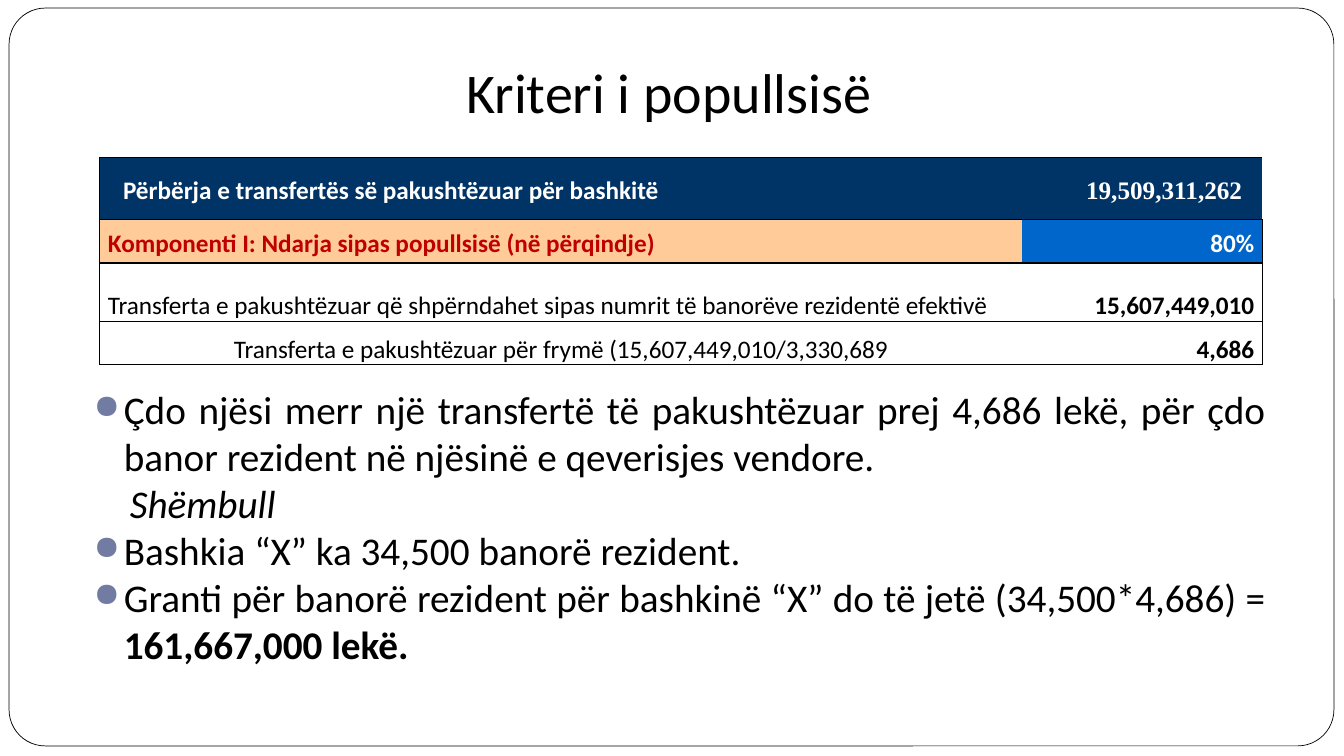
from lxml import etree
from pptx import Presentation
from pptx import util as u
from pptx.dml.color import RGBColor
from pptx.enum import shapes, text
from pptx.oxml.ns import qn

BLACK = RGBColor(0x00, 0x00, 0x00)
WHITE = RGBColor(0xFF, 0xFF, 0xFF)
NAVY = RGBColor(0x00, 0x33, 0x66)
BLUE = RGBColor(0x00, 0x66, 0xCC)
PEACH = RGBColor(0xFF, 0xCC, 0x99)
RED = RGBColor(0xC0, 0x00, 0x00)
BULLET = RGBColor(0x72, 0x7C, 0xA3)

LEFT, CENTER = text.PP_ALIGN.LEFT, text.PP_ALIGN.CENTER
RIGHT, JUSTIFY = text.PP_ALIGN.RIGHT, text.PP_ALIGN.JUSTIFY
MIDDLE, BOTTOM = text.MSO_ANCHOR.MIDDLE, text.MSO_ANCHOR.BOTTOM

TITLE = "Kriteri i popullsisë"
COLUMNS = (9.15, 2.38)
ROWS = [
    (0.62, MIDDLE, "TL B", "T B",
     ("Përbërja e transfertës së pakushtëzuar për bashkitë", LEFT, "Calibri", WHITE, True, NAVY, 0.15, 0),
     ("19,509,311,262", RIGHT, "Times New Roman", WHITE, True, NAVY, 0, 0.12)),
    (0.43, MIDDLE, "TLB", "TRB",
     ("Komponenti I: Ndarja sipas popullsisë (në përqindje)", LEFT, "Calibri", RED, True, PEACH, 0, 0),
     ("80%", RIGHT, "Calibri", WHITE, True, BLUE, 0, 0)),
    (0.58, BOTTOM, "TLB", "TRB",
     ("Transferta e pakushtëzuar që shpërndahet sipas numrit të banorëve rezidentë efektivë",
      LEFT, "Calibri", BLACK, False, None, 0, 0),
     ("15,607,449,010", RIGHT, "Calibri", BLACK, True, None, 0, 0)),
    (0.43, BOTTOM, "TLB", "TRB",
     ("Transferta e pakushtëzuar për frymë (15,607,449,010/3,330,689",
      CENTER, "Calibri", BLACK, False, None, 0, 0),
     ("4,686", RIGHT, "Calibri", BLACK, True, None, 0, 0)),
]
POINTS = [
    (True, False, "Çdo njësi merr një transfertë të pakushtëzuar prej 4,686 lekë, "
     "për çdo banor rezident në njësinë e qeverisjes vendore.", ""),
    (False, True, "Shëmbull", ""),
    (True, False, "Bashkia “X” ka 34,500 banorë rezident.", ""),
    (True, False, "Granti për banorë rezident për bashkinë “X” do të jetë (34,500*4,686) = ",
     "161,667,000 lekë."),
]


def box(*inches):
    return [u.Inches(length) for length in inches]


def style(paragraph, size, color, name="Calibri", align=LEFT):
    paragraph.alignment = align
    paragraph.font.size = u.Pt(size)
    paragraph.font.name = name
    paragraph.font.color.rgb = color


def set_borders(cell, sides):
    properties = cell._tc.get_or_add_tcPr()
    for position, side in enumerate("LRTB"):
        line = etree.Element(qn("a:ln" + side), w=str(u.Pt(1)))
        if side in sides:
            fill = etree.SubElement(line, qn("a:solidFill"))
            etree.SubElement(fill, qn("a:srgbClr"), val=str(BLACK))
        else:
            etree.SubElement(line, qn("a:noFill"))
        properties.insert(position, line)


def set_indent(paragraph, bulleted):
    properties = paragraph._p.get_or_add_pPr()
    properties.set("marL", str(u.Inches(0.3 if bulleted else 0.36)))
    properties.set("indent", str(u.Inches(-0.3 if bulleted else 0)))
    if bulleted:
        color = etree.Element(qn("a:buClr"))
        etree.SubElement(color, qn("a:srgbClr"), val=str(BULLET))
        size = etree.Element(qn("a:buSzPct"), val="85000")
        mark = etree.Element(qn("a:buChar"), char="●")
        for position, part in enumerate((color, size, mark)):
            properties.insert(position, part)


def add_frame(slide):
    frame = slide.shapes.add_shape(shapes.MSO_SHAPE.ROUNDED_RECTANGLE, *box(0.09, 0.08, 13.14, 7.32))
    frame.adjustments[0] = 0.049
    frame.shadow.inherit = False
    frame.fill.solid()
    frame.fill.fore_color.rgb = WHITE
    frame.line.color.rgb = BLACK
    frame.line.width = u.Pt(0.5)


def add_title(slide):
    title = slide.shapes.add_textbox(*box(2.02, 0.38, 9.23, 0.96)).text_frame
    title.word_wrap = True
    title.vertical_anchor = BOTTOM
    title.margin_bottom = u.Inches(0.1)
    heading = title.paragraphs[0]
    heading.text = TITLE
    heading.line_spacing = 1.15
    style(heading, 40, BLACK, align=CENTER)


def add_transfers(slide):
    height = sum(row[0] for row in ROWS)
    transfers = slide.shapes.add_table(
        len(ROWS), len(COLUMNS), *box(0.99, 1.56, sum(COLUMNS), height)).table
    transfers.first_row = transfers.horz_banding = False
    for column, width in zip(transfers.columns, COLUMNS):
        column.width = u.Inches(width)
    for row, (height, anchor, *rest) in enumerate(ROWS):
        transfers.rows[row].height = u.Inches(height)
        for column, (sides, content) in enumerate(zip(rest[:2], rest[2:])):
            words, align, name, color, bold, fill, left, right = content
            cell = transfers.cell(row, column)
            cell.margin_left, cell.margin_right = box(0.08 + left, 0.08 + right)
            cell.margin_top = cell.margin_bottom = 0
            cell.vertical_anchor = anchor
            if fill is None:
                cell.fill.background()
            else:
                cell.fill.solid()
                cell.fill.fore_color.rgb = fill
            set_borders(cell, sides)
            label = cell.text_frame.paragraphs[0]
            label.text = words
            label.line_spacing = 1.15
            label.font.bold = bold
            style(label, 18, color, name, align)


def add_points(slide):
    body = slide.shapes.add_textbox(*box(0.83, 3.77, 11.82, 3.31)).text_frame
    body.word_wrap = True
    for index, (bulleted, italic, words, result) in enumerate(POINTS):
        point = body.add_paragraph() if index else body.paragraphs[0]
        point.add_run().text = words
        if result:
            answer = point.add_run()
            answer.text = result
            answer.font.bold = True
        point.font.italic = italic
        style(point, 28, BLACK, align=JUSTIFY)
        set_indent(point, bulleted)


def main():
    deck = Presentation()
    deck.slide_width, deck.slide_height = box(13.33, 7.5)
    slide = deck.slides.add_slide(deck.slide_layouts[6])
    for add_part in (add_frame, add_title, add_transfers, add_points):
        add_part(slide)
    deck.save("out.pptx")


if __name__ == "__main__":
    main()
